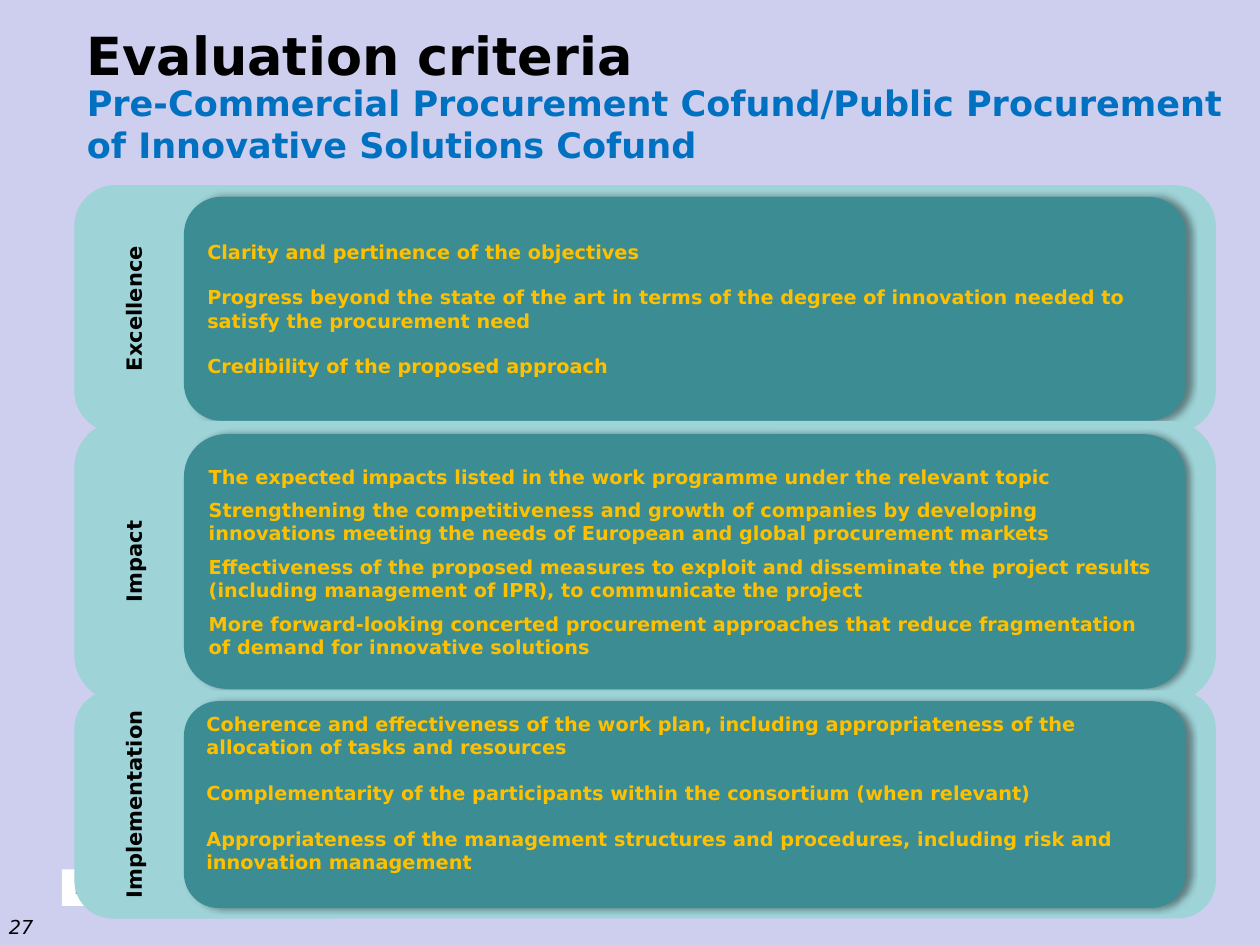
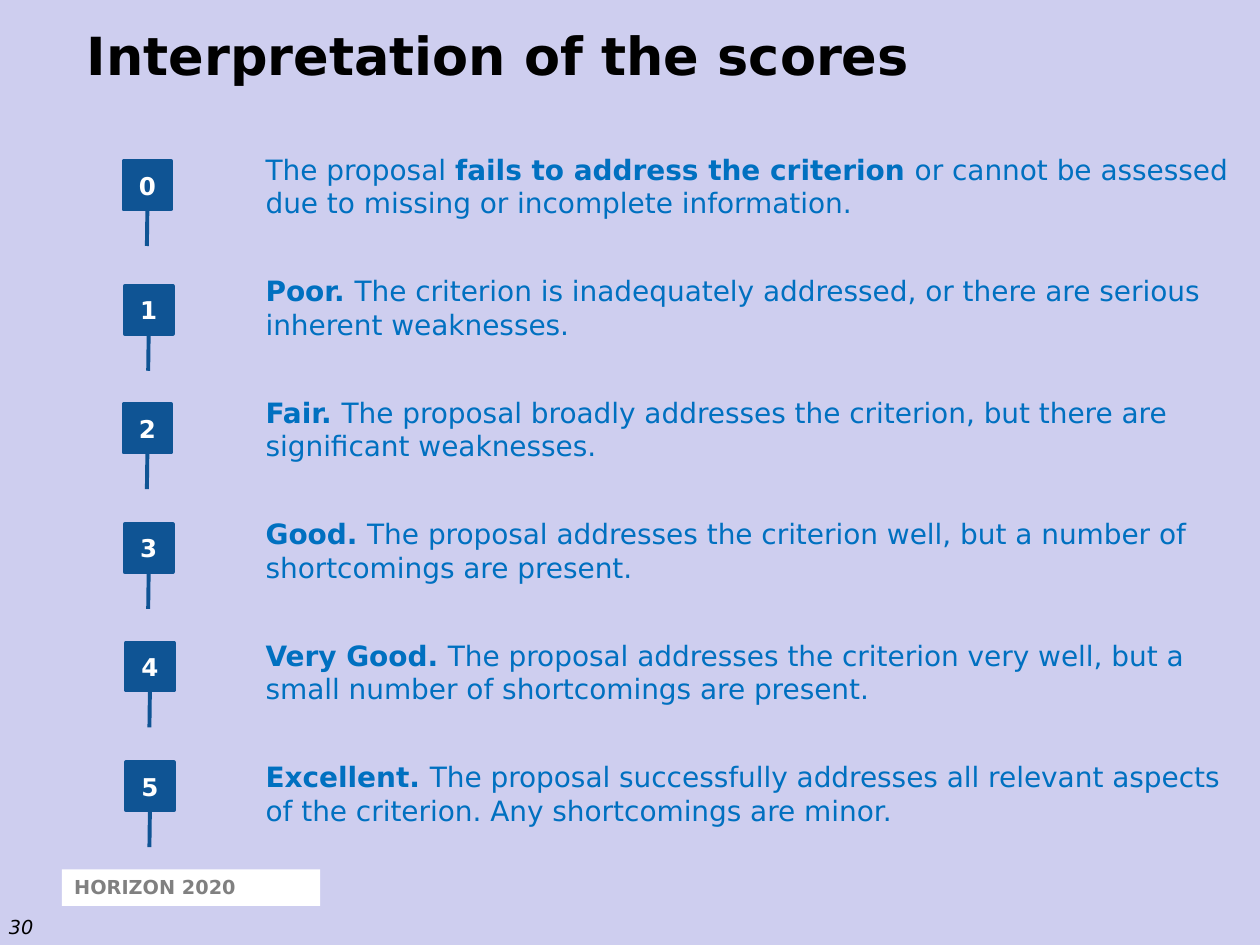
from lxml import etree
from pptx import Presentation
from pptx.dml.color import RGBColor
from pptx.enum.shapes import MSO_SHAPE
from pptx.enum.text import MSO_ANCHOR, MSO_AUTO_SIZE, PP_ALIGN
from pptx.oxml.ns import qn
from pptx.util import Inches, Pt

RECT, ROUND, CALLOUT = MSO_SHAPE.RECTANGLE, MSO_SHAPE.ROUNDED_RECTANGLE, MSO_SHAPE.LINE_CALLOUT_1
TOP, MIDDLE, BOTTOM = MSO_ANCHOR.TOP, MSO_ANCHOR.MIDDLE, MSO_ANCHOR.BOTTOM
LEFT, CENTER = PP_ALIGN.LEFT, PP_ALIGN.CENTER
NO_FIT = MSO_AUTO_SIZE.NONE

FONT = "DejaVu Sans"
BLACK, WHITE, GREY = "000000", "FFFFFF", "808080"
LILAC, BLUE, NAVY = "CECEEF", "0070C0", "0F5494"
MINT, TEAL, GOLD = "9ED3D7", "3C8C93", "FFC000"

W, H = 10, 7.5
MARGIN = 0.59
BAND_W = 9.06
MARK = 0.38

CRITERIA = [
    ("Excellence", 1.47, 1.96, 13, 0.05, [
        "Clarity and pertinence of the objectives",
        "Progress beyond the state of the art in terms of the degree of innovation needed to "
        "satisfy the procurement need",
        "Credibility of the proposed approach"]),
    ("Impact", 3.34, 2.23, 6, 0.05, [
        "The expected impacts listed in the work programme under the relevant topic",
        "Strengthening the competitiveness and growth of companies by developing innovations "
        "meeting the needs of European and global procurement markets",
        "Effectiveness of the proposed measures to exploit and disseminate the project results "
        "(including management of IPR), to communicate the project",
        "More forward-looking concerted procurement approaches that reduce fragmentation of "
        "demand for innovative solutions"]),
    ("Implementation", 5.48, 1.81, 13, 0.23, [
        "Coherence and effectiveness of the work plan, including appropriateness of the "
        "allocation of tasks and resources",
        "Complementarity of the participants within the consortium (when relevant)",
        "Appropriateness of the management structures and procedures, including risk and "
        "innovation management"]),
]

SCORES = [
    [("The proposal ", False), ("fails to address the criterion ", True),
     ("or cannot be assessed due to missing or incomplete information.", False)],
    [("Poor. ", True),
     ("The criterion is inadequately addressed, or there are serious inherent weaknesses.", False)],
    [("Fair. ", True),
     ("The proposal broadly addresses the criterion, but there are significant weaknesses.", False)],
    [("Good. ", True),
     ("The proposal addresses the criterion well, but a number of shortcomings are present.", False)],
    [("Very Good. ", True),
     ("The proposal addresses the criterion very well, but a small number of shortcomings "
      "are present.", False)],
    [("Excellent. ", True),
     ("The proposal successfully addresses all relevant aspects of the criterion. "
      "Any shortcomings are minor.", False)],
]
MARK_SPOTS = [(0.98, 1.28), (0.99, 2.27), (0.98, 3.21), (0.99, 4.16), (1, 5.1), (1, 6.05)]


def rgb(color):
    """Turn a hex string into a colour."""
    return RGBColor.from_string(color)


def inches(*box):
    """Convert lengths in inches."""
    return [Inches(v) for v in box]


def put_text(sp, paragraphs, size=11, color=BLACK, bold=True, italic=False, align=LEFT,
             anchor=TOP, gap=0, wrap=True):
    """Fill a shape with paragraphs, each a string or a list of (text, bold) runs."""
    tf = sp.text_frame
    tf.auto_size, tf.word_wrap, tf.vertical_anchor = NO_FIT, wrap, anchor
    for i, runs in enumerate(paragraphs):
        p = tf.add_paragraph() if i else tf.paragraphs[0]
        p.alignment = align
        p.space_before = Pt(gap if i else 0)
        for text, strong in [(runs, bold)] if isinstance(runs, str) else runs:
            r = p.add_run()
            r.text = text
            f = r.font
            f.name, f.size, f.bold, f.italic = FONT, Pt(size), strong, italic
            f.color.rgb = rgb(color)
    return tf


def add_box(shapes, kind, box, fill):
    """Add a flat filled shape without outline."""
    sp = shapes.add_shape(kind, *inches(*box))
    sp.shadow.inherit = False
    sp.fill.solid()
    sp.fill.fore_color.rgb = rgb(fill)
    sp.line.fill.background()
    return sp


def add_label(shapes, box, paragraphs, **fmt):
    """Add a text box and return its text frame."""
    return put_text(shapes.add_textbox(*inches(*box)), paragraphs, **fmt)


def cast_shadow(sp):
    """Give a shape a soft shadow to its right."""
    effects = sp._element.spPr.find(qn("a:effectLst"))
    shadow = etree.SubElement(effects, qn("a:outerShdw"), blurRad=str(Pt(4)), dist=str(Pt(3)),
                              dir="0", algn="ctr", rotWithShape="0")
    tint = etree.SubElement(shadow, qn("a:srgbClr"), val=BLACK)
    etree.SubElement(tint, qn("a:alpha"), val="40000")


def add_slide(prs, title, number):
    """Add a slide with its title, programme tag and page number."""
    s = prs.slides.add_slide(prs.slide_layouts[5])
    sp = s.shapes.title
    sp.left, sp.top, sp.width, sp.height = inches(MARGIN, 0.13, 9, 1.02)
    put_text(sp, [title], size=30)
    tag = add_box(s.shapes, RECT, (0.49, 6.9, 2.05, 0.29), WHITE)
    put_text(tag, ["HORIZON 2020"], color=GREY)
    tf = add_label(s.shapes, (0, 7.1, 0.49, 0.4), [str(number)], bold=False, italic=True,
                   anchor=BOTTOM)
    tf.margin_left = Inches(0.07)
    return s


def add_criterion(s, name, top, height, gap, foot, points):
    """Draw a band with an upright name and a panel of points."""
    shapes = s.shapes.add_group_shape().shapes
    add_box(shapes, ROUND, (MARGIN, top, BAND_W, height), MINT)
    panel = add_box(shapes, ROUND, (MARGIN + 0.87, top + height * 0.047, 7.95, height * 0.907), TEAL)
    cast_shadow(panel)
    tf = put_text(panel, points, color=GOLD, anchor=MIDDLE, gap=gap)
    tf.margin_bottom = Inches(foot)
    tf = add_label(shapes, (MARGIN + 0.32, top, 0.39, height), [name], size=12, align=CENTER,
                   wrap=False)
    tf._txBody.bodyPr.set("vert", "vert270")


def add_mark(s, score, left, top):
    """Draw a numbered square with a stem below it."""
    sp = add_box(s.shapes, CALLOUT, (left, top, MARK, MARK), NAVY)
    sp.line.color.rgb = rgb(NAVY)
    sp.line.width = Pt(2.25)
    for i, share in enumerate((1, 0.5, 1.77, 0.49)):
        sp.adjustments[i] = share
    put_text(sp, [str(score)], size=14, color=WHITE, align=CENTER, anchor=MIDDLE, wrap=False)


def criteria_slide(prs):
    """Build the slide of evaluation criteria."""
    s = add_slide(prs, "Evaluation criteria", 27)
    add_label(s.shapes, (MARGIN, 0.6, 9.29, 0.8),
              ["Pre-Commercial Procurement Cofund/Public Procurement of Innovative Solutions Cofund"],
              size=20, color=BLUE)
    for criterion in CRITERIA:
        add_criterion(s, *criterion)


def scores_slide(prs):
    """Build the slide that explains the scores."""
    s = add_slide(prs, "Interpretation of the scores", 30)
    add_label(s.shapes, (2.01, 1.16, 7.87, 5.5), SCORES, size=16, color=BLUE, gap=31)
    for score, spot in enumerate(MARK_SPOTS):
        add_mark(s, score, *spot)


def main():
    """Build and save the presentation."""
    prs = Presentation()
    prs.slide_width, prs.slide_height = inches(W, H)
    fill = prs.slide_master.background.fill
    fill.solid()
    fill.fore_color.rgb = rgb(LILAC)
    criteria_slide(prs)
    scores_slide(prs)
    prs.save("out.pptx")


if __name__ == "__main__":
    main()
